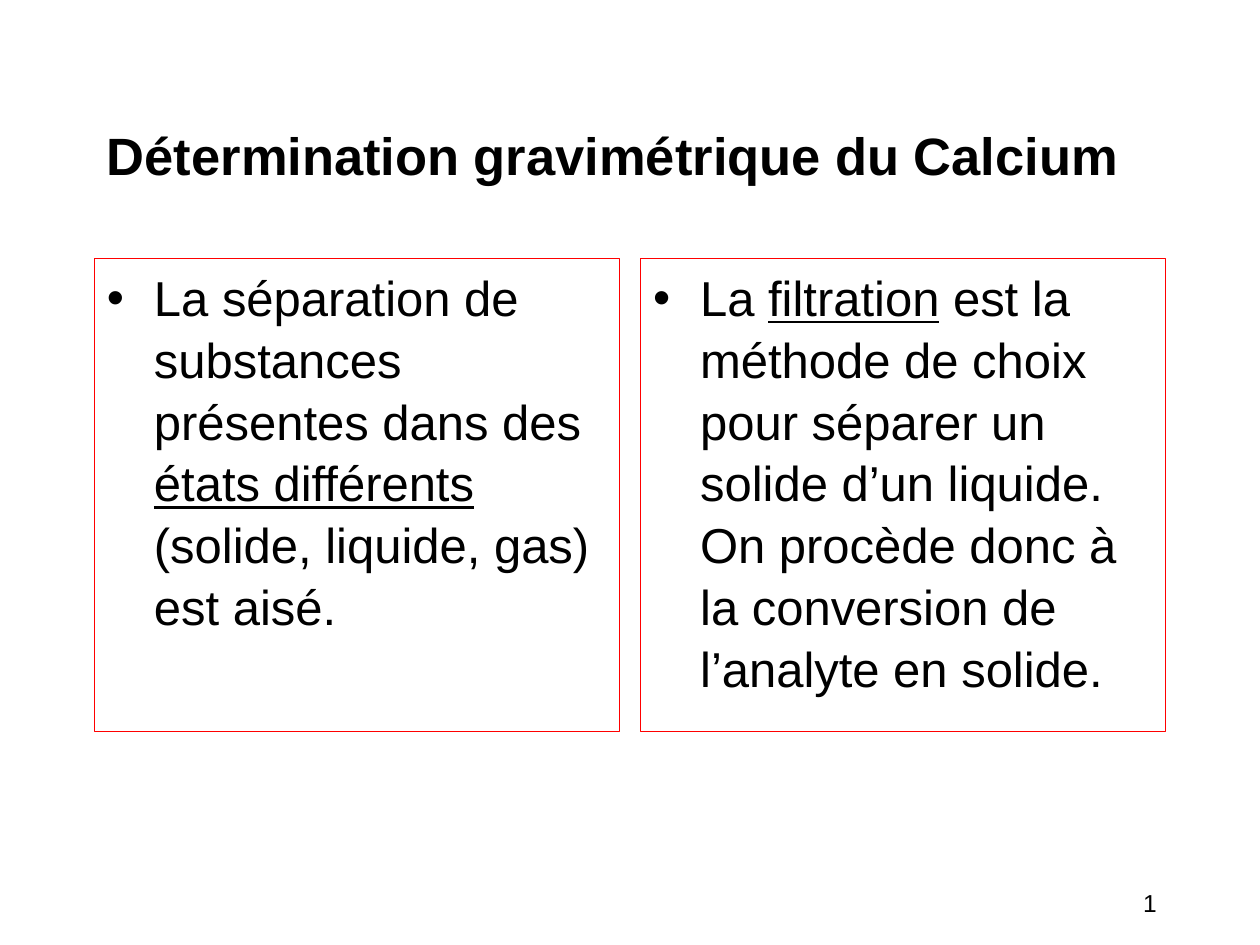
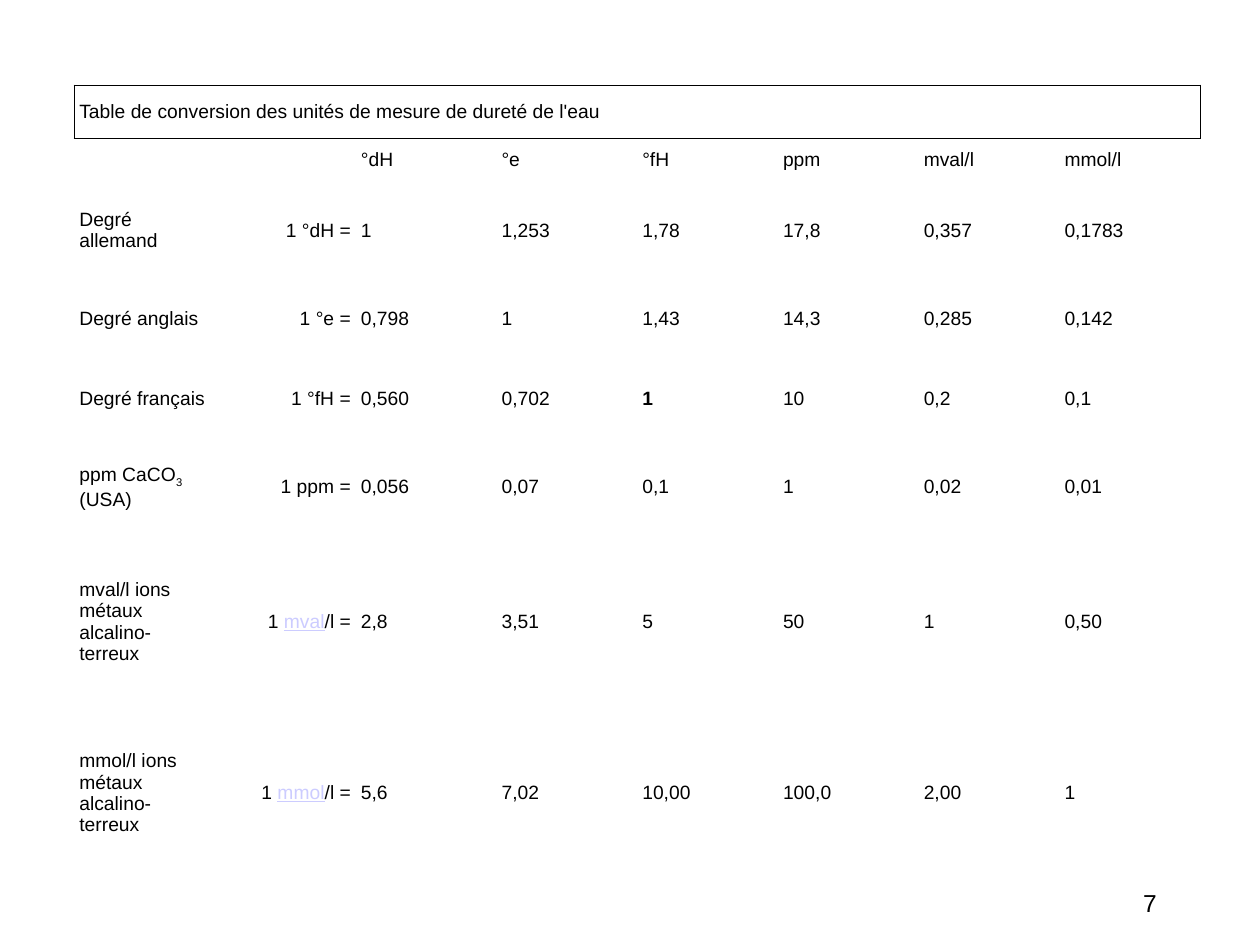
from dataclasses import dataclass
from pptx import Presentation
from pptx.dml.color import RGBColor
from pptx.enum.text import MSO_ANCHOR, MSO_AUTO_SIZE, PP_ALIGN
from pptx.oxml import parse_xml
from pptx.oxml.ns import nsdecls, qn
from pptx.util import Cm, Pt

LEFT, RIGHT = PP_ALIGN.LEFT, PP_ALIGN.RIGHT
TOP, MID = MSO_ANCHOR.TOP, MSO_ANCHOR.MIDDLE
FIXED = MSO_AUTO_SIZE.NONE
PLAIN_GRID = "{2D5ABB26-0587-4C30-8999-92F81FD0307C}"


@dataclass(frozen=True)
class Theme:
    font: str = "Arial"
    ink: str = "000000"
    frame: str = "FF0000"
    link: str = "CCCCFF"
    head: int = 30
    body: int = 28
    cell: int = 11
    page: int = 14


THEME = Theme()

# Content: a run is a string, or a (text, style) pair
TITLE = "Détermination gravimétrique du Calcium"
LISTS = [
    ["La séparation de substances présentes dans des ",
     ("états différents ", "under"), "(solide, liquide, gas) est aisé."],
    ["La ", ("filtration", "under"),
     " est la méthode de choix pour séparer un solide d’un liquide. "
     "On procède donc à la conversion de l’analyte en solide."],
]
CAPTION = "Table de conversion des unités de mesure de dureté de l'eau"
UNITS = ["°dH", "°e", "°fH", "ppm", "mval/l", "mmol/l"]
ROWS = [
    (["Degré allemand"], ["1 °dH ="],
     ["1", "1,253", "1,78", "17,8", "0,357", "0,1783"]),
    (["Degré anglais"], ["1 °e ="],
     ["0,798", "1", "1,43", "14,3", "0,285", "0,142"]),
    (["Degré français"], ["1 °fH ="],
     ["0,560", "0,702", ("1", "bold"), "10", "0,2", "0,1"]),
    (["ppm CaCO", ("3", "sub"), " (USA)"], ["1 ppm ="],
     ["0,056", "0,07", "0,1", "1", "0,02", "0,01"]),
    (["mval/l ions métaux alcalino-terreux"],
     ["1 ", ("mval", "link"), "/l ="],
     ["2,8", "3,51", "5", "50", "1", "0,50"]),
    (["mmol/l ions métaux alcalino-terreux"],
     ["1 ", ("mmol", "link"), "/l ="],
     ["5,6", "7,02", "10,00", "100,0", "2,00", "1"]),
]
PAGES = ["1", "7"]

# Layout, in centimetres
EDGE, WIDE, GAP = 1.9, 21.6, 0.42
HEAD_TOP, HEAD_HIGH = 1.52, 3.18
LIST_TOP, LIST_HIGH = 5.21, 9.53
GRID_LEFT, GRID_TOP, GRID_WIDE = 1.5, 1.72, 22.7
HIGHS = [1.07, 0.86, 1.98, 1.6, 1.6, 1.98, 3.45, 3.45]


# Shared helpers
def place(shape, x, y, w, h):
    shape.left, shape.top, shape.width, shape.height = map(Cm, (x, y, w, h))


def write(para, runs, size, align=LEFT, bold=False):
    para.alignment = align
    for item in runs:
        text, style = (item, "") if isinstance(item, str) else item
        run = para.add_run()
        run.text = text
        font = run.font
        font.name, font.size = THEME.font, Pt(size)
        font.bold = bold or style == "bold"
        font.underline = style in ("under", "link")
        tint = THEME.link if style == "link" else THEME.ink
        font.color.rgb = RGBColor.from_string(tint)
        if style == "sub":
            run.font._element.set("baseline", "-25000")


def number(slide, text):
    box = slide.shapes.add_textbox(Cm(18.29), Cm(17.78), Cm(5.28), Cm(1.27))
    box.text_frame.word_wrap = True
    write(box.text_frame.paragraphs[0], [text], THEME.page, RIGHT)


def bullet(para, depth):
    props = para._p.get_or_add_pPr()
    props.set("marL", str(Cm(depth)))
    props.set("indent", str(-Cm(depth)))
    props.append(parse_xml(f'<a:buFont {nsdecls("a")} typeface="{THEME.font}"/>'))
    props.append(parse_xml(f'<a:buChar {nsdecls("a")} char="•"/>'))


def border(cell):
    props = cell._tc.get_or_add_tcPr()
    for spot, side in enumerate(("lnL", "lnR", "lnT", "lnB")):
        props.insert(spot, parse_xml(
            f'<a:{side} {nsdecls("a")} w="{Pt(1)}"><a:solidFill>'
            f'<a:srgbClr val="{THEME.ink}"/></a:solidFill></a:{side}>'))


# Slide with two framed lists
def lists(deck):
    slide = deck.slides.add_slide(deck.slide_layouts[3])
    head, *boxes = slide.placeholders
    place(head, EDGE, HEAD_TOP, WIDE, HEAD_HIGH)
    head.text_frame.auto_size = FIXED
    head.text_frame.vertical_anchor = MID
    write(head.text_frame.paragraphs[0], [TITLE], THEME.head, bold=True)

    wide = (WIDE - GAP) / 2
    for col, (box, runs) in enumerate(zip(boxes, LISTS)):
        place(box, EDGE + col * (wide + GAP), LIST_TOP, wide, LIST_HIGH)
        box.line.color.rgb = RGBColor.from_string(THEME.frame)
        box.line.width = Pt(0.75)
        frame = box.text_frame
        frame.auto_size, frame.vertical_anchor = FIXED, TOP
        para = frame.paragraphs[0]
        bullet(para, 0.95)
        para.space_before, para.line_spacing = Pt(0), 1.05
        write(para, runs, THEME.body)
    number(slide, PAGES[0])


# Slide with the conversion table
def units(deck):
    slide = deck.slides.add_slide(deck.slide_layouts[6])
    number(slide, PAGES[1])
    cols = len(UNITS) + 2
    grid = slide.shapes.add_table(
        len(HIGHS), cols, Cm(GRID_LEFT), Cm(GRID_TOP),
        Cm(GRID_WIDE), Cm(sum(HIGHS))).table
    grid.first_row = grid.horz_banding = False
    grid._tbl.tblPr.find(qn("a:tableStyleId")).text = PLAIN_GRID
    for row, high in zip(grid.rows, HIGHS):
        row.height = Cm(high)
    for col in grid.columns:
        col.width = Cm(GRID_WIDE / cols)

    lines = [[[CAPTION]], [[], []] + [[unit] for unit in UNITS]]
    lines += [[name, base] + [[val] for val in vals]
              for name, base, vals in ROWS]
    for cell in grid.iter_cells():
        cell.fill.background()
        cell.vertical_anchor = MID
        cell.margin_left = cell.margin_right = Cm(0.1)
        cell.margin_top = cell.margin_bottom = Cm(0.05)
    for r, line in enumerate(lines):
        for c, runs in enumerate(line):
            align = RIGHT if c == 1 else LEFT
            write(grid.cell(r, c).text_frame.paragraphs[0], runs,
                  THEME.cell, align)
    first = grid.cell(0, 0)
    first.merge(grid.cell(0, cols - 1))
    border(first)


def main():
    deck = Presentation()
    deck.slide_width, deck.slide_height = Cm(25.4), Cm(19.05)
    lists(deck)
    units(deck)
    deck.save("out.pptx")


if __name__ == "__main__":
    main()
